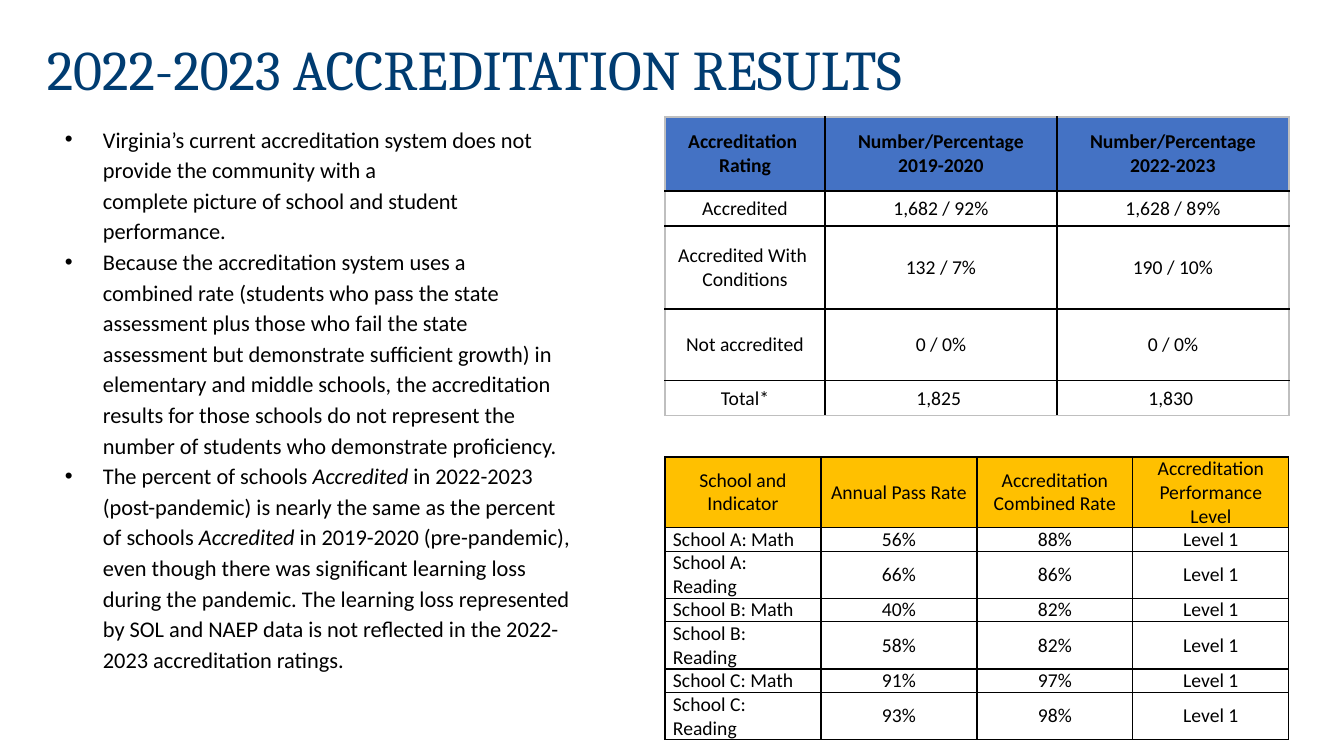
from lxml.etree import SubElement
from pptx import Presentation
from pptx.dml.color import RGBColor
from pptx.enum.text import MSO_ANCHOR, MSO_AUTO_SIZE, PP_ALIGN
from pptx.oxml.ns import qn
from pptx.util import Pt

SCALE = 914400 / 100.8
HARD = chr(160)
NAVY = RGBColor(0x00, 0x3C, 0x71)
BLACK = RGBColor(0, 0, 0)
GRAY = RGBColor(0xBF, 0xBF, 0xBF)
BLUE = RGBColor(0x44, 0x72, 0xC4)
GOLD = RGBColor(0xFF, 0xC0, 0x00)

POINTS = [
    "Virginia’s current accreditation system does not provide the_community with_a complete_picture_of_school and student performance._",
    "Because the accreditation system uses a combined_rate (students who pass the state assessment plus_those who fail the state assessment but_demonstrate sufficient growth) in elementary and_middle schools, the accreditation results for those_schools do not represent the number of students_who demonstrate proficiency.",
    "The percent of schools_*Accredited*_in 2022-2023 (post-pandemic) is nearly the same_as_the percent of schools_*Accredited*_in 2019-2020 (pre-pandemic), even though there was significant learning loss during the pandemic._The learning loss represented by SOL_and NAEP data is not reflected in the 2022-2023_accreditation ratings.",
]
RATINGS = [
    ("Accreditation_\nRating", "Number/Percentage\n2019-2020", "Number/Percentage\n2022-2023"),
    ("Accredited", "1,682 / 92%", "1,628 / 89%"),
    ("Accredited With_\nConditions", "132 / 7%", "190 / 10%"),
    ("Not accredited", "0 / 0%", "0 / 0%"),
    ("Total*", "1,825_", "1,830_"),
]
SCHOOLS = [
    ("School and Indicator", "Annual Pass Rate", "Accreditation Combined Rate", "Accreditation Performance Level"),
    ("School A: Math", "56%", "88%", "Level 1"),
    ("School A: Reading", "66%", "86%", "Level 1"),
    ("School B: Math", "40%", "82%", "Level 1"),
    ("School B: Reading", "58%", "82%", "Level 1"),
    ("School C: Math", "91%", "97%", "Level 1"),
    ("School C: Reading", "93%", "98%", "Level 1"),
]


def px(size):
    return round(size * SCALE)


def bind(text):
    return text.replace("_", HARD)


def style(para, name, size, color, bold=False):
    font = para.font
    font.name, font.size, font.bold = name, Pt(size), bold
    font.color.rgb = color


def add_text(slide, box):
    frame = slide.shapes.add_textbox(*map(px, box)).text_frame
    frame.word_wrap = True
    return frame


def add_title(slide, box):
    frame = add_text(slide, box)
    frame.vertical_anchor = MSO_ANCHOR.BOTTOM
    para = frame.paragraphs[0]
    para.text = "2022-2023 ACCREDITATION RESULTS"
    para.line_spacing = 0.9
    style(para, "Cambria", 40, NAVY)


def add_points(slide, box):
    frame = add_text(slide, box)
    frame.auto_size = MSO_AUTO_SIZE.SHAPE_TO_FIT_TEXT
    for order, point in enumerate(POINTS):
        para = frame.add_paragraph() if order else frame.paragraphs[0]
        para.line_spacing = 1.14
        for turn, part in enumerate(point.split("*")):
            run = para.add_run()
            run.text = bind(part)
            if turn % 2:
                run.font.italic = True
        style(para, "Calibri", 16, BLACK)
        props = para._p.get_or_add_pPr()
        props.set("marL", str(px(38)))
        props.set("indent", str(-px(38)))
        SubElement(props, qn("a:buFont")).set("typeface", "Arial")
        SubElement(props, qn("a:buChar")).set("char", "•")
        props.append(props.find(qn("a:defRPr")))


def add_edge(cell, side, color):
    props = cell._tc.get_or_add_tcPr()
    line = SubElement(props, qn("a:" + side), w=str(Pt(1)))
    fill = SubElement(line, qn("a:solidFill"))
    SubElement(fill, qn("a:srgbClr"), val=str(color))


def add_grid(slide, box, data, widths, heights, head, rim, inset, bold, first):
    table = slide.shapes.add_table(len(data), len(widths), *map(px, box)).table
    table.horz_banding = False
    for col, width in zip(table.columns, widths):
        col.width = px(width)
    for row, height in zip(table.rows, heights):
        row.height = px(height)
    end, last = len(data) - 1, len(widths) - 1
    for r, words in enumerate(data):
        for c, text in enumerate(words):
            cell = table.cell(r, c)
            cell.text = bind(text)
            cell.vertical_anchor = MSO_ANCHOR.MIDDLE
            cell.margin_left = cell.margin_right = px(inset)
            cell.margin_top = cell.margin_bottom = 0
            for para in cell.text_frame.paragraphs:
                para.alignment = first if r and not c else PP_ALIGN.CENTER
                style(para, "Calibri", 14, BLACK, bold and r == 0)
            outer = {"lnL": c == 0, "lnR": c == last, "lnT": r == 0, "lnB": r == end}
            for side, edge in outer.items():
                add_edge(cell, side, rim if edge else BLACK)
            if r:
                cell.fill.background()
            else:
                cell.fill.solid()
                cell.fill.fore_color.rgb = head


def add_ratings(slide, box):
    add_grid(slide, box, RATINGS, [160, 232, 232], [74, 35, 83, 72, 35],
             BLUE, GRAY, 0, True, PP_ALIGN.CENTER)


def add_schools(slide, box):
    add_grid(slide, box, SCHOOLS, [box[2] / 4] * 4, [70] + [23, 47] * 3,
             GOLD, BLACK, 8, False, PP_ALIGN.LEFT)


def main():
    deck = Presentation()
    deck.slide_width, deck.slide_height = px(1344), px(756)
    slide = deck.slides.add_slide(deck.slide_layouts[6])
    add_title(slide, (37, 17, 1297, 91))
    add_ratings(slide, (665, 117, 624, 299))
    add_points(slide, (55, 117, 531, 602))
    add_schools(slide, (665, 457, 624, 280))
    deck.save("out.pptx")


if __name__ == "__main__":
    main()
